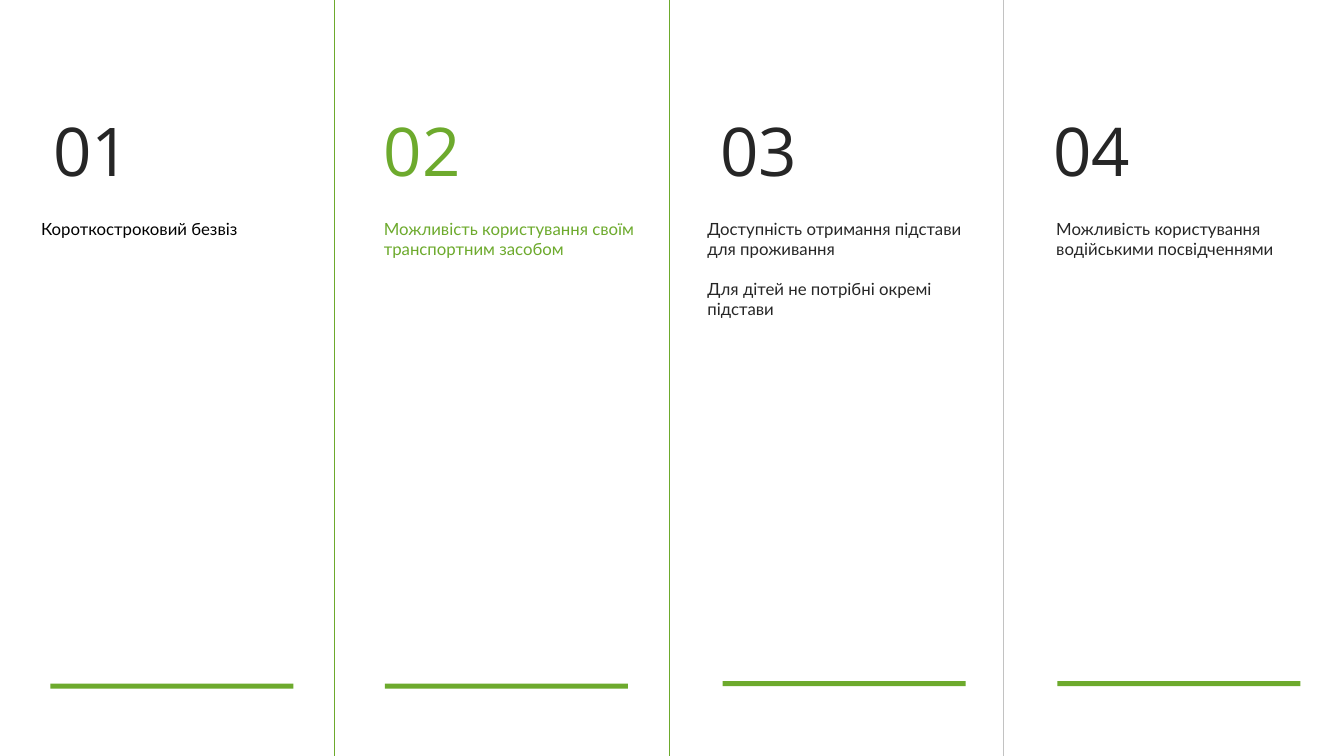
from pptx import Presentation
from pptx.dml.color import RGBColor
from pptx.enum import shapes, text
from pptx.oxml.ns import qn
from pptx.util import Pt

COLORS = {"green": "6DAA2D", "dark": "262626", "black": "000000", "grey": "C2C2C2"}
WIDTH, HEIGHT = 960, 540
COLUMN_STEP = 239

# number, number left, text left, text height, bar left, bar top,
# number colour, text colour, paragraphs
COLUMNS = [
    ("01", 31, 22.3, 21.8, 36, 488.3, "dark", "black",
     ["Короткостроковий безвіз"]),
    ("02", 267.1, 267.1, 36.3, 275, 488.3, "green", "green",
     ["Можливість користування своїм транспортним засобом"]),
    ("03", 507.6, 498.3, 80, 516.2, 486.6, "dark", "dark",
     ["Доступність отримання підстави для проживання",
      "Для дітей не потрібні окремі підстави"]),
    ("04", 745.2, 747.4, 36.3, 755.3, 486.6, "dark", "dark",
     ["Можливість користування водійськими посвідченнями"]),
]
DIVIDER_COLORS = ["green", "green", "grey"]


class Deck:
    """Holds the style and the current slide."""

    number_font, number_size = "Open Sans", 48
    body_font, body_size = "Lato", 12
    paragraph_gap = 14

    def __init__(self):
        self.prs = Presentation()
        self.prs.slide_width, self.prs.slide_height = Pt(WIDTH), Pt(HEIGHT)
        self.slide = self.prs.slides.add_slide(self.prs.slide_layouts[6])

    def color(self, name):
        return RGBColor.from_string(COLORS[name])

    def textbox(self, x, y, w, h, paragraphs, font, size, color):
        tf = self.slide.shapes.add_textbox(Pt(x), Pt(y), Pt(w), Pt(h)).text_frame
        tf.word_wrap = True
        tf.auto_size = text.MSO_AUTO_SIZE.SHAPE_TO_FIT_TEXT
        for i, line in enumerate(paragraphs):
            p = tf.add_paragraph() if i else tf.paragraphs[0]
            if i:
                p.space_before = Pt(self.paragraph_gap)
            r = p.add_run()
            r.text = line
            r.font.name, r.font.size = font, Pt(size)
            r.font.color.rgb = self.color(color)

    def number(self, x, label, color):
        self.textbox(x, 74.9, 72, 65.4, [label],
                     self.number_font, self.number_size, color)

    def body(self, x, h, paragraphs, color):
        self.textbox(x, 152.6, 198.7, h, paragraphs,
                     self.body_font, self.body_size, color)

    def bar(self, x, y):
        sp = self.slide.shapes.add_shape(
            shapes.MSO_SHAPE.RECTANGLE, Pt(x), Pt(y), Pt(173.5), Pt(3.6))
        sp.shadow.inherit = False
        sp.fill.solid()
        sp.fill.fore_color.rgb = self.color("green")
        sp.line.fill.background()

    def divider(self, x, color):
        line = self.slide.shapes.add_connector(
            shapes.MSO_CONNECTOR.STRAIGHT, Pt(x), Pt(HEIGHT), Pt(x), Pt(0))
        line.line.color.rgb = self.color(color)
        line.line.width = Pt(0.5)
        sp_pr = line._element.spPr
        sp_pr.append(sp_pr.makeelement(qn("a:effectLst"), {}))


def main():
    deck = Deck()
    for i, color in enumerate(DIVIDER_COLORS, 1):
        deck.divider(i * COLUMN_STEP, color)
    for (label, number_x, body_x, body_h, bar_x, bar_y,
         number_color, body_color, paragraphs) in COLUMNS:
        deck.number(number_x, label, number_color)
        deck.body(body_x, body_h, paragraphs, body_color)
        deck.bar(bar_x, bar_y)
    deck.prs.save("out.pptx")


if __name__ == "__main__":
    main()
